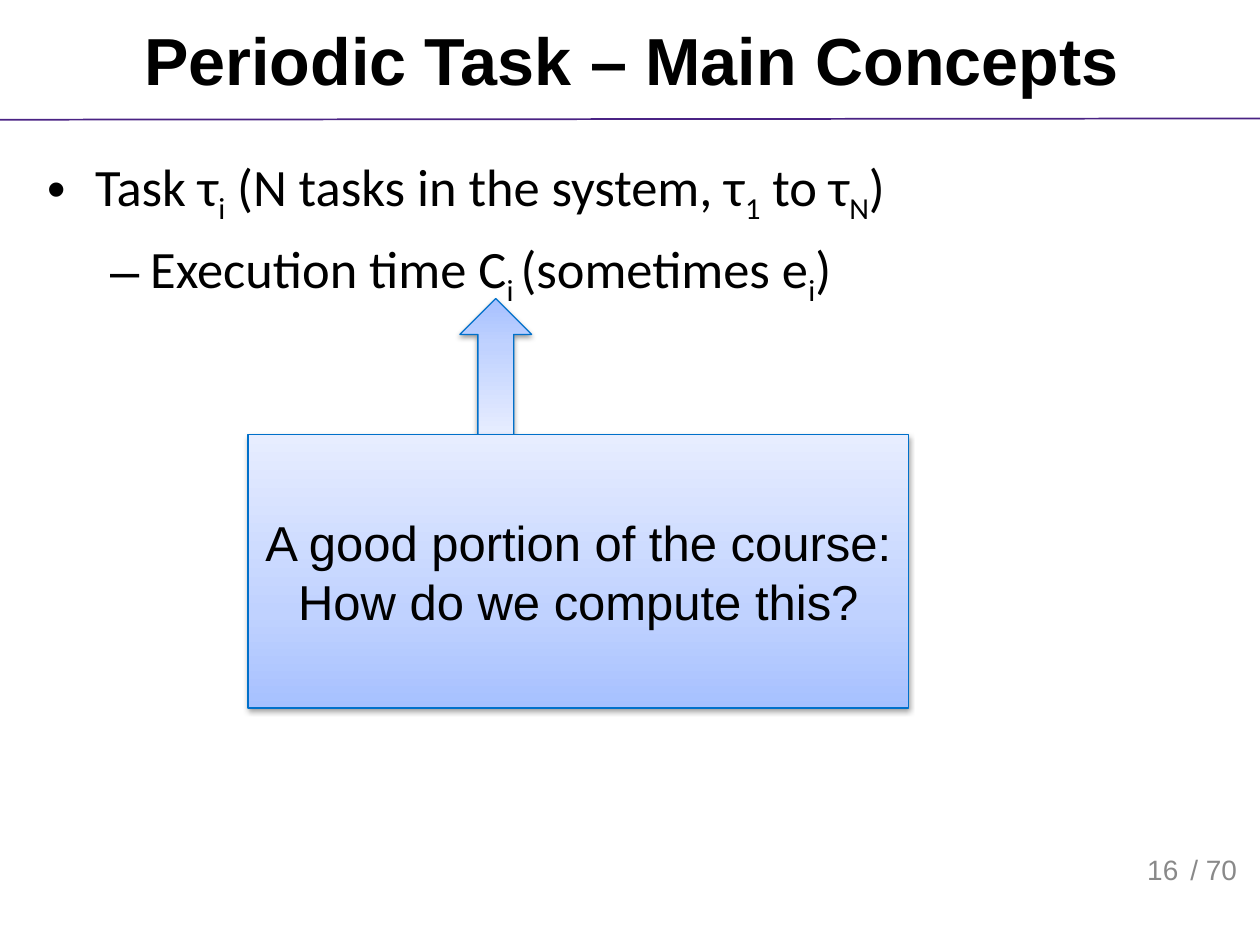
from dataclasses import dataclass

from lxml.etree import SubElement
from pptx import Presentation
from pptx.dml.color import RGBColor
from pptx.enum.shapes import MSO_CONNECTOR, MSO_SHAPE
from pptx.enum.text import MSO_ANCHOR, PP_ALIGN
from pptx.oxml.ns import qn
from pptx.util import Pt


@dataclass(frozen=True)
class Theme:
    heading_font: str = "Arial"
    body_font: str = "Calibri"
    title_size: int = 38
    body_size: int = 30
    callout_size: int = 28
    page_size: int = 16
    ink: str = "000000"
    muted: str = "898989"
    rule: str = "4A2384"
    outline: str = "0070CA"
    gradient: tuple = ((0, "A6C0FF"), (35, "C0D2FF"), (100, "E7EDFF"))


class SlideBuilder:
    def __init__(self, slide, theme):
        self.slide = slide
        self.theme = theme

    def style(self, paragraph, font_name, size, color, bold=False):
        font = paragraph.font
        font.name, font.size, font.bold = font_name, Pt(size), bold
        font.color.rgb = RGBColor.from_string(color)

    def frame(self, left, top, width, height, anchor):
        box = self.slide.shapes.add_textbox(Pt(left), Pt(top), Pt(width), Pt(height))
        box.text_frame.word_wrap = True
        box.text_frame.vertical_anchor = anchor
        return box.text_frame

    def text(self, text, bounds, size, color, anchor, align, bold=False):
        paragraph = self.frame(*bounds, anchor).paragraphs[0]
        paragraph.text = text
        paragraph.alignment = align
        self.style(paragraph, self.theme.heading_font, size, color, bold)

    def rule(self, start, end):
        line = self.slide.shapes.add_connector(
            MSO_CONNECTOR.STRAIGHT, *(Pt(value) for value in start + end))
        line.line.color.rgb = RGBColor.from_string(self.theme.rule)
        line.line.width = Pt(1)
        SubElement(line._element.spPr, qn("a:effectLst"))

    def bullets(self, items, bounds):
        """Items are (mark, indent, hanging, parts); every second part is a subscript."""
        text_frame = self.frame(*bounds, MSO_ANCHOR.TOP)
        for number, (mark, indent, hanging, parts) in enumerate(items):
            paragraph = text_frame.add_paragraph() if number else text_frame.paragraphs[0]
            if number:
                paragraph.space_before = Pt(6)
            properties = paragraph._p.get_or_add_pPr()
            properties.set("marL", str(Pt(indent)))
            properties.set("indent", str(-Pt(hanging)))
            SubElement(properties, qn("a:buFont"), typeface="Arial")
            SubElement(properties, qn("a:buChar"), char=mark)
            self.style(paragraph, self.theme.body_font, self.theme.body_size, self.theme.ink)
            for position, part in enumerate(parts):
                run = paragraph.add_run()
                run.text = part
                if position % 2:
                    run._r.get_or_add_rPr().set("baseline", "-25000")

    def gradient_shape(self, kind, bounds, rotation=0):
        shape = self.slide.shapes.add_shape(kind, *(Pt(value) for value in bounds))
        shape.rotation = rotation
        shape.fill.gradient()
        shape.fill.gradient_angle = 90
        stops = shape._element.spPr.find(".//" + qn("a:gsLst"))
        for stop in list(stops):
            stops.remove(stop)
        for position, color in self.theme.gradient:
            stop = SubElement(stops, qn("a:gs"), pos=str(position * 1000))
            SubElement(stop, qn("a:srgbClr"), val=color)
        shape.line.color.rgb = RGBColor.from_string(self.theme.outline)
        shape.line.width = Pt(0.75)
        self.soft_shadow(shape)
        return shape

    def soft_shadow(self, shape):
        shape.shadow.inherit = False
        effects = shape._element.spPr.find(qn("a:effectLst"))
        shadow = SubElement(effects, qn("a:outerShdw"), blurRad=str(Pt(3.1)),
                            dist=str(Pt(1.6)), dir="5400000", rotWithShape="0")
        color = SubElement(shadow, qn("a:srgbClr"), val=self.theme.ink)
        SubElement(color, qn("a:alpha"), val="38000")

    def callout(self, text, bounds):
        text_frame = self.gradient_shape(MSO_SHAPE.RECTANGLE, bounds).text_frame
        text_frame.word_wrap = True
        text_frame.vertical_anchor = MSO_ANCHOR.MIDDLE
        paragraph = text_frame.paragraphs[0]
        paragraph.text = text
        paragraph.alignment = PP_ALIGN.CENTER
        self.style(paragraph, self.theme.heading_font, self.theme.callout_size, self.theme.ink)


def main():
    presentation = Presentation()
    presentation.slide_width, presentation.slide_height = Pt(720), Pt(540)
    theme = Theme()
    builder = SlideBuilder(presentation.slides.add_slide(presentation.slide_layouts[6]), theme)

    builder.rule((0, 68.4), (720, 67.7))
    builder.text("Periodic Task – Main Concepts", (23.8, 0, 674.6, 67.7), theme.title_size,
                 theme.ink, MSO_ANCHOR.MIDDLE, PP_ALIGN.CENTER, bold=True)
    for text, left, align in (("16", 604.1, PP_ALIGN.RIGHT), ("/ 70", 673.2, PP_ALIGN.LEFT)):
        builder.text(text, (left, 481, 76.3, 28.8), theme.page_size,
                     theme.muted, MSO_ANCHOR.BOTTOM, align)
    builder.bullets([
        ("•", 27, 27, ("Task τ", "i", " (N tasks in the system, τ", "1", " to τ", "N", ")")),
        ("–", 58.5, 22.5, ("Execution time C", "i ", "(sometimes e", "i", ")")),
    ], (20.2, 84.2, 682.6, 445))
    builder.gradient_shape(MSO_SHAPE.DOWN_ARROW, (262.8, 170.6, 41, 77.8), rotation=180)
    builder.callout("A good portion of the course: How do we compute this?",
                    (141.8, 248.4, 377.3, 156.2))
    presentation.save("out.pptx")


if __name__ == "__main__":
    main()
